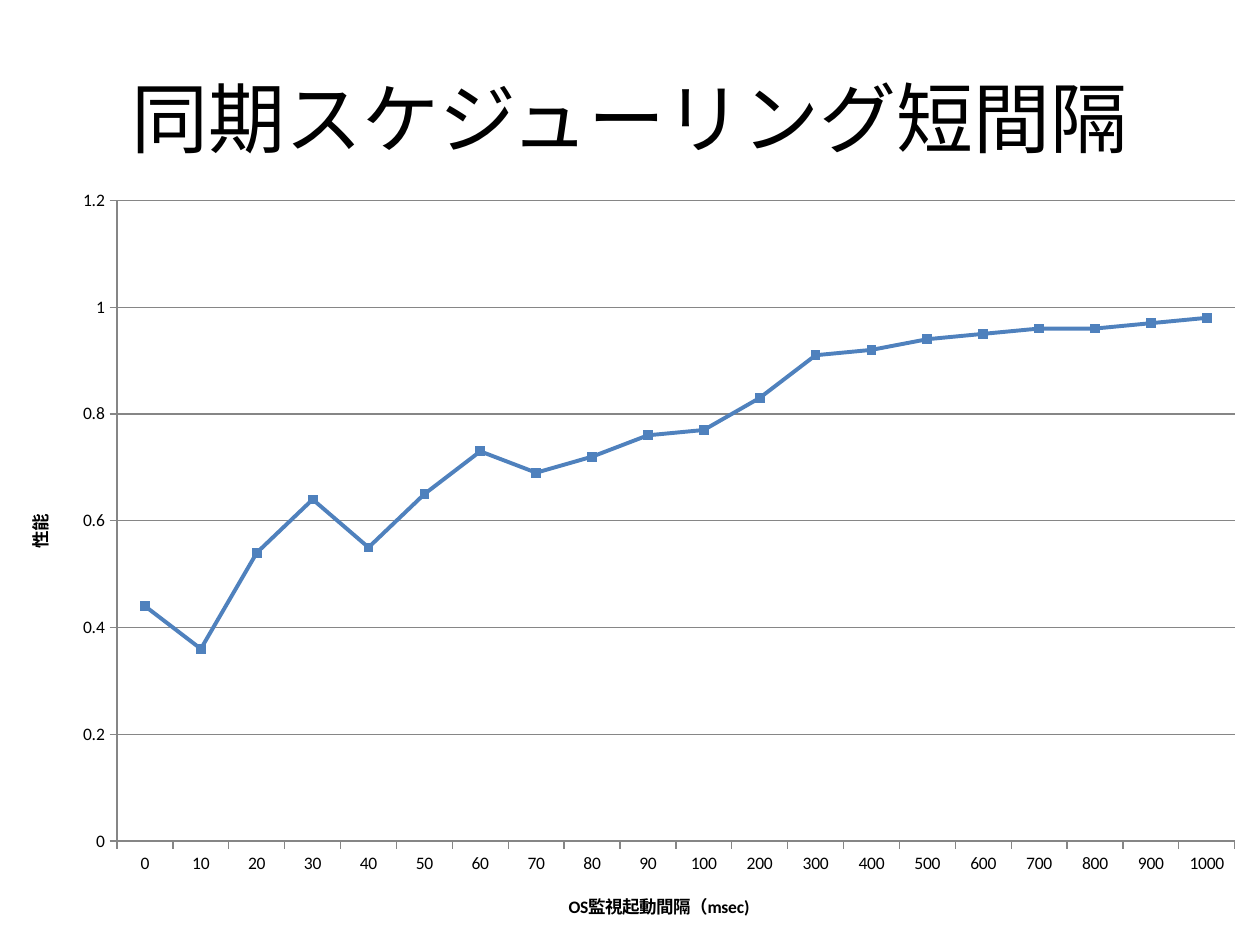
import pptx
import pptx.chart.data
import pptx.dml.color
import pptx.enum.chart
import pptx.enum.text
import pptx.util
from pptx.util import Inches

BLACK = pptx.dml.color.RGBColor(0x00, 0x00, 0x00)
GRAY = pptx.dml.color.RGBColor(0x86, 0x86, 0x86)
BLUE = pptx.dml.color.RGBColor(0x4F, 0x81, 0xBD)

INTERVALS = [*range(0, 100, 10), *range(100, 1001, 100)]
PERFORMANCE = [0.44, 0.36, 0.54, 0.64, 0.55, 0.65, 0.73, 0.69, 0.72, 0.76,
               0.77, 0.83, 0.91, 0.92, 0.94, 0.95, 0.96, 0.96, 0.97, 0.98]


class Deck:
    """Hold the text style and the current slide."""

    def __init__(self, prs):
        self.font_name = "Calibri"
        self.color = BLACK
        self.s = prs.slides.add_slide(prs.slide_layouts[5])

    def style(self, font, size, bold=False):
        font.name = self.font_name
        font.size = pptx.util.Pt(size)
        font.bold = bold
        font.color.rgb = self.color

    def title(self, text, x, y, w, h):
        sp = self.s.shapes.title
        sp.left, sp.top, sp.width, sp.height = map(Inches, (x, y, w, h))
        tf = sp.text_frame
        tf.text = text
        tf.vertical_anchor = pptx.enum.text.MSO_ANCHOR.MIDDLE
        p = tf.paragraphs[0]
        p.alignment = pptx.enum.text.PP_ALIGN.CENTER
        self.style(p.runs[0].font, 44)

    def axis(self, axis, title):
        tf = axis.axis_title.text_frame
        tf.text = title
        self.style(tf.paragraphs[0].runs[0].font, 10, bold=True)
        axis.major_tick_mark = pptx.enum.chart.XL_TICK_MARK.OUTSIDE
        axis.minor_tick_mark = pptx.enum.chart.XL_TICK_MARK.NONE
        self.line(axis.format.line, GRAY, 0.75)

    def line(self, line, color, width):
        line.color.rgb = color
        line.width = pptx.util.Pt(width)

    def line_chart(self, categories, name, values, x_title, y_title, x, y, w, h):
        data = pptx.chart.data.CategoryChartData()
        data.categories = [str(c) for c in categories]
        data.add_series(name, values)
        chart = self.s.shapes.add_chart(
            pptx.enum.chart.XL_CHART_TYPE.LINE_MARKERS,
            *map(Inches, (x, y, w, h)), data).chart
        self.style(chart.font, 10)
        chart.has_legend = False
        chart.has_title = False
        self.axis(chart.category_axis, x_title)
        val = chart.value_axis
        self.axis(val, y_title)
        val.minimum_scale, val.maximum_scale, val.major_unit = 0, 1.2, 0.2
        val.tick_labels.number_format = "General"
        val.tick_labels.number_format_is_linked = False
        val.has_major_gridlines = True
        self.line(val.major_gridlines.format.line, GRAY, 0.75)
        plot = chart.plots[0]
        plot.vary_by_categories = False
        series = plot.series[0]
        series.smooth = False
        self.line(series.format.line, BLUE, 2.25)
        marker = series.marker
        marker.style = pptx.enum.chart.XL_MARKER_STYLE.SQUARE
        marker.size = 5
        marker.format.fill.solid()
        marker.format.fill.fore_color.rgb = BLUE
        self.line(marker.format.line, BLUE, 0.75)


def main():
    prs = pptx.Presentation()
    prs.slide_width, prs.slide_height = Inches(10), Inches(7.5)
    deck = Deck(prs)
    deck.title("同期スケジューリング短間隔", 0.5, 0.3, 9, 1.25)
    deck.line_chart(INTERVALS, "Series 1", PERFORMANCE,
                    "OS監視起動間隔（msec)", "性能", 0, 1.39, 10, 6.11)
    prs.save("out.pptx")


if __name__ == "__main__":
    main()
